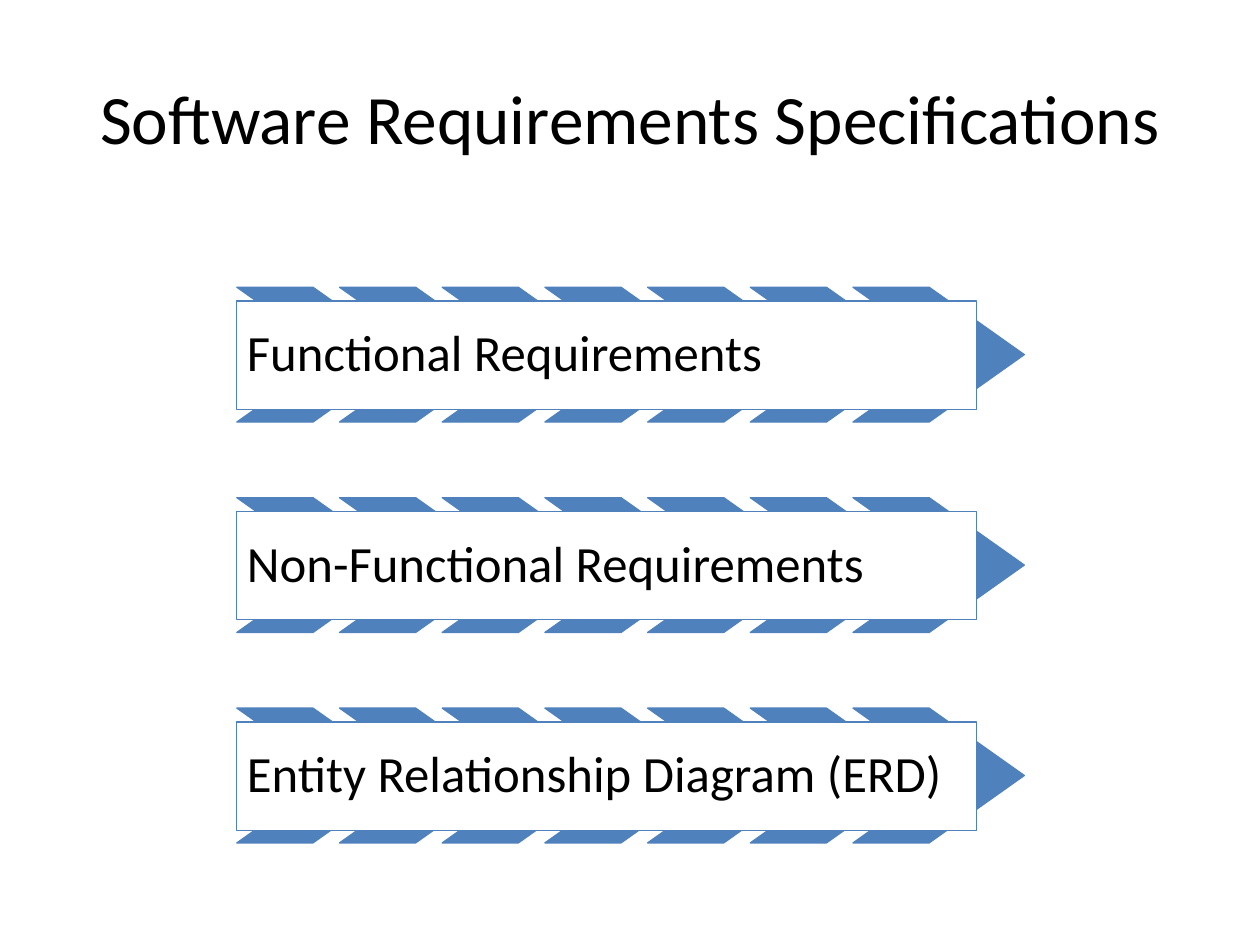
from dataclasses import dataclass

from pptx import Presentation
from pptx.dml.color import RGBColor
from pptx.enum.shapes import MSO_SHAPE
from pptx.enum.text import MSO_ANCHOR, PP_ALIGN
from pptx.util import Inches, Pt

CHEVRON = MSO_SHAPE.CHEVRON
RECTANGLE = MSO_SHAPE.RECTANGLE
MIDDLE = MSO_ANCHOR.MIDDLE
LEFT = PP_ALIGN.LEFT
CENTER = PP_ALIGN.CENTER
TITLE_ONLY = 5


@dataclass(frozen=True)
class Theme:
    font: str = "Calibri"
    title_size: float = 39.6
    label_size: float = 29
    line_width: float = 0.75
    text: RGBColor = RGBColor(0x00, 0x00, 0x00)
    accent: RGBColor = RGBColor(0x4F, 0x81, 0xBD)
    paper: RGBColor = RGBColor(0xFF, 0xFF, 0xFF)


class SlideBuilder:
    """Holds the theme and the current slide."""

    def __init__(self, slide, theme):
        self.slide = slide
        self.theme = theme

    def add_text(self, frame, text, size, align):
        frame.word_wrap = True
        frame.vertical_anchor = MIDDLE
        paragraph = frame.paragraphs[0]
        paragraph.alignment = align
        run = paragraph.add_run()
        run.text = text
        run.font.name = self.theme.font
        run.font.size = Pt(size)
        run.font.color.rgb = self.theme.text
        return paragraph

    def title(self, text, left, top, width, height):
        heading = self.slide.shapes.title
        heading.left, heading.top = Inches(left), Inches(top)
        heading.width, heading.height = Inches(width), Inches(height)
        self.add_text(heading.text_frame, text, self.theme.title_size, CENTER)

    def shape(self, kind, left, top, width, height, fill):
        shape = self.slide.shapes.add_shape(
            kind, Inches(left), Inches(top), Inches(width), Inches(height))
        shape.shadow.inherit = False
        shape.fill.solid()
        shape.fill.fore_color.rgb = fill
        shape.line.color.rgb = self.theme.accent
        shape.line.width = Pt(self.theme.line_width)
        return shape

    def chevron(self, left, top, width, height):
        chevron = self.shape(CHEVRON, left, top, width, height, self.theme.accent)
        chevron.adjustments[0] = 0.706

    def label(self, text, left, top, width, height):
        box = self.shape(RECTANGLE, left, top, width, height, self.theme.paper)
        frame = box.text_frame
        frame.margin_left = frame.margin_right = Inches(0.08)
        frame.margin_top = frame.margin_bottom = Inches(0.08)
        paragraph = self.add_text(frame, text, self.theme.label_size, LEFT)
        paragraph.line_spacing = 0.9

    def arrow_row(self, text, left, top):
        # Seven overlapping chevrons behind one label
        for step in range(7):
            self.chevron(left + step * 0.815, top, 1.36, 1.07)
        self.label(text, left, top + 0.11, 5.87, 0.86)


def main():
    presentation = Presentation()
    presentation.slide_width = Inches(10)
    presentation.slide_height = Inches(7.5)
    slide = presentation.slides.add_slide(presentation.slide_layouts[TITLE_ONLY])
    builder = SlideBuilder(slide, Theme())

    # Heading
    builder.title("Software Requirements Specifications", 0.5, 0.3, 9, 1.25)

    # Parts of the specification
    requirements = (
        "Functional Requirements",
        "Non-Functional Requirements",
        "Entity Relationship Diagram (ERD)",
    )
    for row, requirement in enumerate(requirements):
        builder.arrow_row(requirement, 1.88, 2.28 + row * 1.67)

    presentation.save("out.pptx")


if __name__ == "__main__":
    main()
